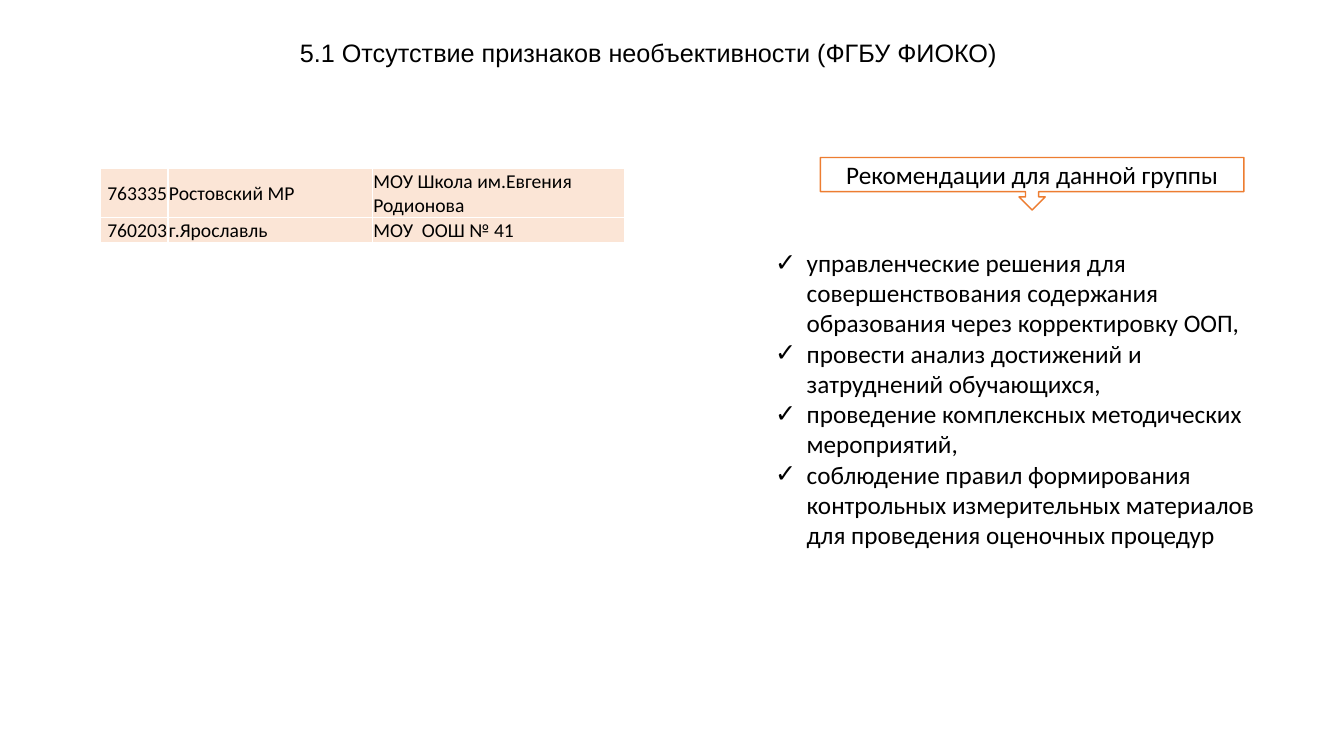
"""Build the slide on the absence of signs of biased results."""
from dataclasses import dataclass

from lxml import etree
from pptx import Presentation
from pptx.dml.color import RGBColor
from pptx.enum.shapes import MSO_SHAPE
from pptx.enum.text import MSO_ANCHOR, MSO_AUTO_SIZE, PP_ALIGN
from pptx.oxml.ns import qn
from pptx.util import Pt

CALLOUT = MSO_SHAPE.DOWN_ARROW_CALLOUT
TOP, MIDDLE = MSO_ANCHOR.TOP, MSO_ANCHOR.MIDDLE
NO_FIT = MSO_AUTO_SIZE.NONE
LEFT, CENTER, RIGHT = PP_ALIGN.LEFT, PP_ALIGN.CENTER, PP_ALIGN.RIGHT


@dataclass(frozen=True)
class Theme:
    """Hold the colours, fonts and type sizes of the slide."""
    text: str = "000000"
    white: str = "FFFFFF"
    accent: str = "ED7D31"
    cell: str = "FBE5D6"
    title_font: str = "Arial"
    body_font: str = "Calibri"
    body_size: int = 18
    table_size: int = 14


THEME = Theme()
TITLE = "5.1 Отсутствие признаков необъективности (ФГБУ ФИОКО)"
CALLOUT_TEXT = "Рекомендации для данной группы"
SCHOOLS = [
    ("763335", "Ростовский МР", "МОУ Школа им.Евгения Родионова"),
    ("760203", "г.Ярославль", "МОУ  ООШ № 41"),
]
COLUMN_WIDTHS = (48, 146, 180)
ROW_HEIGHTS = (34, 17)
ADVICE = [
    "управленческие решения для совершенствования содержания образования "
    "через корректировку ООП,",
    "провести анализ достижений и затруднений обучающихся,",
    "проведение комплексных методических мероприятий,",
    "соблюдение правил формирования контрольных измерительных материалов "
    "для проведения оценочных процедур",
]


def add_text(p, text, *, size=THEME.body_size, font=THEME.body_font, align=LEFT):
    """Write formatted text into a paragraph."""
    p.alignment = align
    p.space_before = Pt(0)
    p.line_spacing = 1.0
    r = p.add_run()
    r.text = text
    r.font.size = Pt(size)
    r.font.name = font
    r.font.bold = False
    r.font.color.rgb = RGBColor.from_string(THEME.text)


def place(sp, left, top, width, height):
    """Move a placeholder and return its prepared text frame."""
    sp.left, sp.top = Pt(left), Pt(top)
    sp.width, sp.height = Pt(width), Pt(height)
    tf = sp.text_frame
    tf.word_wrap = True
    tf.auto_size = NO_FIT
    tf.vertical_anchor = TOP
    return tf


def add_check(p):
    """Give a paragraph a hanging check mark."""
    pPr = p._p.get_or_add_pPr()
    pPr.set("marL", str(Pt(22.5)))
    pPr.set("indent", str(-Pt(22.5)))
    etree.SubElement(pPr, qn("a:buFont"), typeface=THEME.title_font)
    etree.SubElement(pPr, qn("a:buChar"), char="✓")


def fill_list(tf, items):
    """Fill a text frame with checked items."""
    for i, item in enumerate(items):
        p = tf.add_paragraph() if i else tf.paragraphs[0]
        add_check(p)
        add_text(p, item)


def add_callout(slide, text, left, top, width, height):
    """Add an outlined callout with a downward arrow."""
    sp = slide.shapes.add_shape(CALLOUT, Pt(left), Pt(top), Pt(width), Pt(height))
    sp.shadow.inherit = False
    sp.fill.solid()
    sp.fill.fore_color.rgb = RGBColor.from_string(THEME.white)
    sp.line.color.rgb = RGBColor.from_string(THEME.accent)
    sp.line.width = Pt(1)
    tf = sp.text_frame
    tf.word_wrap = True
    tf.vertical_anchor = MIDDLE
    add_text(tf.paragraphs[0], text, align=CENTER)


def add_borders(cell):
    """Draw thin white borders around a table cell."""
    tcPr = cell._tc.get_or_add_tcPr()
    for i, side in enumerate(("lnL", "lnR", "lnT", "lnB")):
        ln = etree.Element(qn(f"a:{side}"), w=str(Pt(1)))
        fill = etree.SubElement(ln, qn("a:solidFill"))
        etree.SubElement(fill, qn("a:srgbClr"), val=THEME.white)
        tcPr.insert(i, ln)


def format_cell(cell, text, align):
    """Write and style one table cell."""
    cell.margin_left = cell.margin_right = cell.margin_top = Pt(0.7)
    cell.margin_bottom = Pt(0)
    cell.vertical_anchor = MIDDLE
    cell.fill.solid()
    cell.fill.fore_color.rgb = RGBColor.from_string(THEME.cell)
    add_borders(cell)
    add_text(cell.text_frame.paragraphs[0], text, size=THEME.table_size, align=align)


def add_school_table(slide, left, top):
    """Add the table of schools."""
    frame = slide.shapes.add_table(
        len(SCHOOLS), len(COLUMN_WIDTHS), Pt(left), Pt(top),
        Pt(sum(COLUMN_WIDTHS)), Pt(sum(ROW_HEIGHTS)))
    table = frame.table
    table.first_row = table.horz_banding = False
    for column, width in zip(table.columns, COLUMN_WIDTHS):
        column.width = Pt(width)
    for row, height, school in zip(table.rows, ROW_HEIGHTS, SCHOOLS):
        row.height = Pt(height)
        for cell, text, align in zip(row.cells, school, (RIGHT, LEFT, LEFT)):
            format_cell(cell, text, align)


def main():
    """Build and save the slide."""
    prs = Presentation()
    prs.slide_width, prs.slide_height = Pt(960), Pt(540)
    slide = prs.slides.add_slide(prs.slide_layouts[1])
    title, body = slide.placeholders
    add_callout(slide, CALLOUT_TEXT, 586, 112.5, 302.5, 37.5)
    tf = place(title, 207, 23, 544, 29)
    add_text(tf.paragraphs[0], TITLE, font=THEME.title_font)
    add_school_table(slide, 72, 120.5)
    fill_list(place(body, 546.5, 173, 371.5, 225), ADVICE)
    prs.save("out.pptx")


if __name__ == "__main__":
    main()
